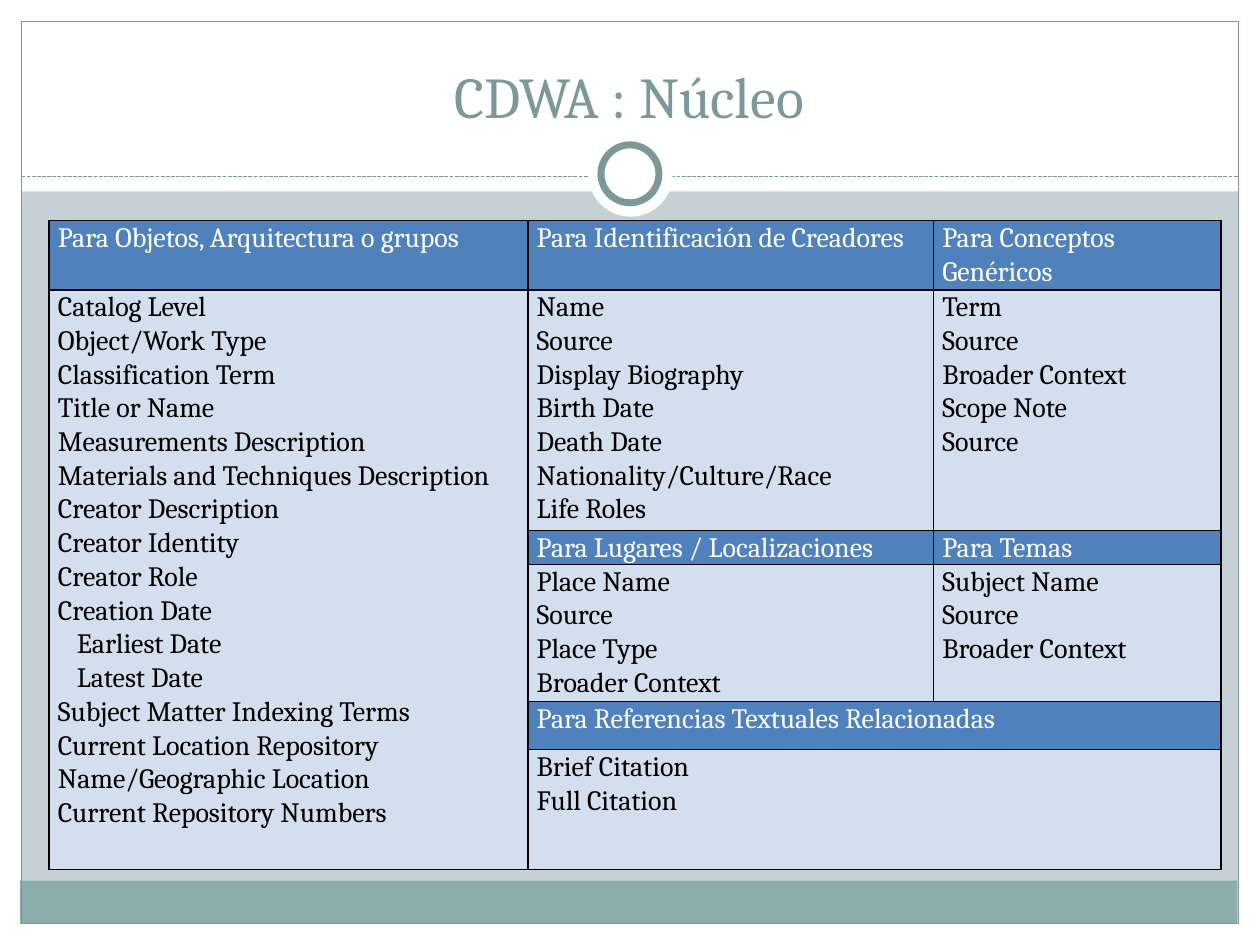
import lxml.etree
import pptx
import pptx.dml.color
import pptx.enum.dml
import pptx.enum.shapes
import pptx.enum.text
import pptx.oxml.ns
import pptx.util

Inches, Pt = pptx.util.Inches, pptx.util.Pt
qn = pptx.oxml.ns.qn
SHAPES = pptx.enum.shapes.MSO_SHAPE

FONT = "Cambria"
WHITE, BLACK, TEAL, BAND, BACKDROP = "FFFFFF", "000000", "7C999A", "8CADAE", "C5D1D7"
HEAD_FILL, BODY_FILL = "4F81BD", "D3DFEE"

TITLE = "CDWA : Núcleo"
# preset, (left, top, width, height), fill, line width in points
FRAME = [
    (SHAPES.RECTANGLE, (0, 7.33, 10, 0.17), WHITE, 0),
    (SHAPES.RECTANGLE, (0, 0, 10, 1.52), WHITE, 0),
    (SHAPES.RECTANGLE, (0, 0, 0.17, 7.5), WHITE, 0),
    (SHAPES.RECTANGLE, (9.83, 0, 0.17, 7.5), WHITE, 0),
    (SHAPES.RECTANGLE, (0.16, 6.99, 9.66, 0.34), BAND, 0),
    (SHAPES.RECTANGLE, (0.17, 0.17, 9.66, 7.16), None, 0.75),
]
RING = [
    (SHAPES.OVAL, (4.67, 1.05, 0.67, 0.67), WHITE, 0),
    (SHAPES.OVAL, (4.77, 1.15, 0.46, 0.46), WHITE, 4),
]

COLUMNS = [3.8, 3.22, 2.28]
ROWS = [0.55, 1.91, 0.27, 1.09, 0.38, 0.95]
HEAD_ROWS = (0, 2, 4)
MERGES = [((1, 0), (5, 0)), ((4, 1), (4, 2)), ((5, 1), (5, 2))]
INDENTED = ("Earliest Date", "Latest Date")
CELLS = {
    (0, 0): ["Para Objetos, Arquitectura o grupos"],
    (0, 1): ["Para Identificación de Creadores"],
    (0, 2): ["Para Conceptos Genéricos"],
    (1, 0): ["Catalog Level", "Object/Work Type", "Classification Term", "Title or Name",
             "Measurements Description", "Materials and Techniques Description",
             "Creator Description", "Creator Identity", "Creator Role", "Creation Date",
             "Earliest Date", "Latest Date", "Subject Matter Indexing Terms",
             "Current Location Repository Name/Geographic Location",
             "Current Repository Numbers"],
    (1, 1): ["Name", "Source", "Display Biography", "Birth Date", "Death Date",
             "Nationality/Culture/Race", "Life Roles"],
    (1, 2): ["Term", "Source", "Broader Context", "Scope Note", "Source"],
    (2, 1): ["Para Lugares / Localizaciones"],
    (2, 2): ["Para Temas"],
    (3, 1): ["Place Name", "Source", "Place Type", "Broader Context"],
    (3, 2): ["Subject Name", "Source", "Broader Context"],
    (4, 1): ["Para Referencias Textuales Relacionadas"],
    (5, 1): ["Brief Citation", "Full Citation"],
}


def color(value):
    return pptx.dml.color.RGBColor.from_string(value)


def paint(fill, value):
    fill.solid()
    fill.fore_color.rgb = color(value)


def style_font(font, size, value):
    font.name, font.size = FONT, Pt(size)
    font.color.rgb = color(value)


def add_shapes(page, items):
    for preset, place, fill, width in items:
        shape = page.shapes.add_shape(preset, *map(Inches, place))
        shape.shadow.inherit = False
        if fill:
            paint(shape.fill, fill)
        else:
            shape.fill.background()
        if width:
            paint(shape.line.fill, TEAL)
            shape.line.width = Pt(width)
        else:
            shape.line.fill.background()


def add_divider(page):
    line = page.shapes.add_connector(
        pptx.enum.shapes.MSO_CONNECTOR.STRAIGHT,
        Inches(0.17), Inches(1.4), Inches(9.83), Inches(1.4))
    paint(line.line.fill, TEAL)
    line.line.width = Pt(0.75)
    line.line.dash_style = pptx.enum.dml.MSO_LINE.SQUARE_DOT
    lxml.etree.SubElement(line.element.spPr, qn("a:effectLst"))


def place_title(page):
    title = page.shapes.title
    title.left, title.top, title.width, title.height = map(Inches, (0.33, 0.25, 9.33, 0.83))
    title.text_frame.text = TITLE
    title.text_frame.vertical_anchor = pptx.enum.text.MSO_ANCHOR.BOTTOM
    para = title.text_frame.paragraphs[0]
    para.alignment = pptx.enum.text.PP_ALIGN.CENTER
    style_font(para.font, 33, TEAL)
    title.element.getparent().append(title.element)  # in front of the white bands


def add_borders(cell):
    properties = cell._tc.get_or_add_tcPr()
    for side in ("a:lnL", "a:lnR", "a:lnT", "a:lnB"):
        border = lxml.etree.SubElement(properties, qn(side), w=str(Pt(1)))
        fill = lxml.etree.SubElement(border, qn("a:solidFill"))
        lxml.etree.SubElement(fill, qn("a:srgbClr"), val=BLACK)


def fill_text(cell, lines, value):
    cell.text_frame.text = "\n".join(lines)
    for para, line in zip(cell.text_frame.paragraphs, lines):
        para.line_spacing = 1.05
        para.space_after = Pt(0)
        style_font(para.font, 16, value)
        if line in INDENTED:
            para._p.get_or_add_pPr().set("marL", str(Inches(0.15)))


def add_core_table(page):
    table = page.shapes.add_table(
        len(ROWS), len(COLUMNS), Inches(0.39), Inches(1.75),
        Inches(sum(COLUMNS)), Inches(sum(ROWS))).table
    table.first_row = table.horz_banding = False
    for column, width in zip(table.columns, COLUMNS):
        column.width = Inches(width)
    for r, height in enumerate(ROWS):
        table.rows[r].height = Inches(height)
        for c in range(len(COLUMNS)):
            cell = table.cell(r, c)
            is_head = r in HEAD_ROWS and (r == 0 or c > 0)
            cell.margin_left = cell.margin_right = Inches(0.07)
            cell.margin_top = cell.margin_bottom = 0
            add_borders(cell)
            paint(cell.fill, HEAD_FILL if is_head else BODY_FILL)
            if (r, c) in CELLS:
                fill_text(cell, CELLS[r, c], WHITE if is_head else BLACK)
    for first, last in MERGES:
        table.cell(*first).merge(table.cell(*last))


def main():
    deck = pptx.Presentation()
    deck.slide_width, deck.slide_height = Inches(10), Inches(7.5)
    page = deck.slides.add_slide(deck.slide_layouts.get_by_name("Title Only"))
    paint(page.background.fill, BACKDROP)
    add_shapes(page, FRAME)
    add_divider(page)
    add_shapes(page, RING)
    place_title(page)
    add_core_table(page)
    deck.save("out.pptx")


if __name__ == "__main__":
    main()
